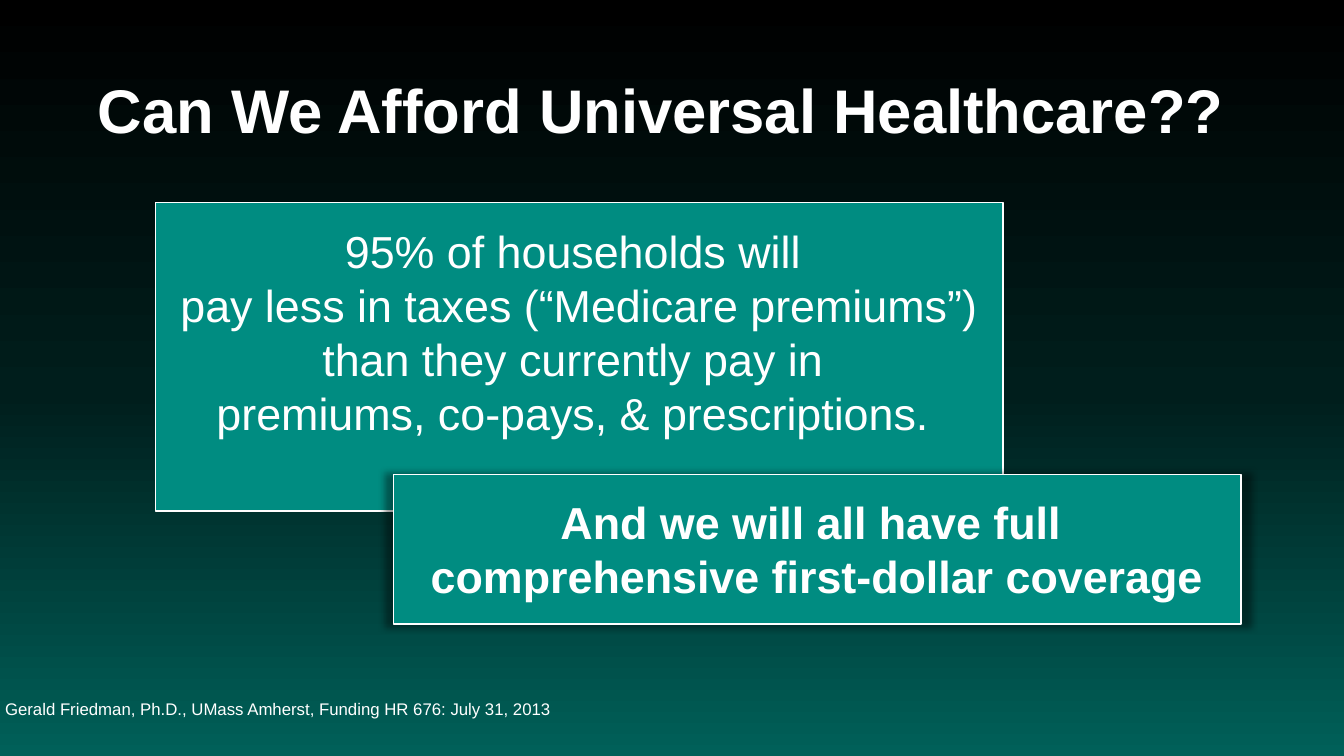
from lxml import etree
from pptx import Presentation
from pptx.dml.color import RGBColor
from pptx.enum.shapes import MSO_SHAPE
from pptx.enum.text import MSO_ANCHOR, MSO_AUTO_SIZE, PP_ALIGN
from pptx.oxml.ns import qn
from pptx.util import Inches, Pt

RECTANGLE = MSO_SHAPE.RECTANGLE
TOP, MIDDLE = MSO_ANCHOR.TOP, MSO_ANCHOR.MIDDLE
LEFT, CENTER = PP_ALIGN.LEFT, PP_ALIGN.CENTER
GROW, FIXED = MSO_AUTO_SIZE.SHAPE_TO_FIT_TEXT, MSO_AUTO_SIZE.NONE

WHITE, TEAL, BLACK = "FFFFFF", "008C81", "000000"
BACKGROUND_STOPS = [(0, BLACK), (52, "001E1C"), (100, "006059")]

TITLE = ["Can We Afford Universal Healthcare??"]
CREDIT = ["Gerald Friedman, Ph.D., UMass Amherst, Funding HR 676: July 31, 2013"]
# The space closing some lines counts in their centring.
SAVINGS = [
    "95% of households will ",
    "pay less in taxes (“Medicare premiums”)",
    "than they currently pay in ",
    "premiums, co-pays, & prescriptions. ",
]
COVERAGE = ["And we will all have full ", "comprehensive first-dollar coverage"]
PANEL_WIDTH = 8.41


def color(value):
    return RGBColor.from_string(value)


def add_color(parent, value):
    return etree.SubElement(parent, qn("a:srgbClr"), val=value)


def paint_background(page, stops):
    """Fill the page with a gradient running from top to bottom."""
    fill = page.background.fill
    fill.gradient()
    fill.gradient_angle = 270
    stop_list = page.element.find(".//" + qn("a:gsLst"))
    for old_stop in list(stop_list):
        stop_list.remove(old_stop)
    for percent, value in stops:
        stop = etree.SubElement(stop_list, qn("a:gs"), pos=str(percent * 1000))
        add_color(stop, value)


def write(box, lines, size=32, bold=False, align=CENTER, anchor=MIDDLE,
          spacing=None, margins=(0.1, 0.2, 0.1, 0.2), auto_size=GROW):
    """Fill a box with one paragraph per line; margins run left, top, right, bottom."""
    frame = box.text_frame
    frame.word_wrap = True
    frame.auto_size = auto_size
    frame.vertical_anchor = anchor
    (frame.margin_left, frame.margin_top,
     frame.margin_right, frame.margin_bottom) = map(Inches, margins)
    for number, line in enumerate(lines):
        para = frame.add_paragraph() if number else frame.paragraphs[0]
        para.alignment = align
        if spacing:
            para.line_spacing = spacing
        span = para.add_run()
        span.text = line
        span.font.name = "Arial"
        span.font.size = Pt(size)
        span.font.bold = bold
        span.font.color.rgb = color(WHITE)


def add_label(page, place, lines, **text_format):
    box = page.shapes.add_textbox(*map(Inches, place))
    write(box, lines, align=LEFT, spacing=0.9, margins=(0.05,) * 4,
          auto_size=FIXED, **text_format)


def add_panel(page, place, lines, **text_format):
    panel = page.shapes.add_shape(RECTANGLE, *map(Inches, place))
    panel.shadow.inherit = False
    panel.fill.solid()
    panel.fill.fore_color.rgb = color(TEAL)
    panel.line.color.rgb = color(WHITE)
    panel.line.width = Pt(1)
    write(panel, lines, **text_format)
    return panel


def add_glow_shadow(panel, blur, opacity):
    """Surround a panel with a soft shadow that has no offset."""
    effects = panel.element.spPr.find(qn("a:effectLst"))
    shadow = etree.SubElement(effects, qn("a:outerShdw"), blurRad=str(Pt(blur)),
                              dist="0", dir="0", sx="102000", sy="102000",
                              algn="ctr", rotWithShape="0")
    shade = add_color(shadow, BLACK)
    etree.SubElement(shade, qn("a:alpha"), val=str(opacity * 1000))


def main():
    deck = Presentation()
    deck.slide_width, deck.slide_height = Inches(13.33), Inches(7.5)
    page = deck.slides.add_slide(deck.slide_layouts[6])
    paint_background(page, BACKGROUND_STOPS)
    add_label(page, (0.92, 0.4, 11.5, 1.45), TITLE, size=44, bold=True)
    add_label(page, (0, 6.58, 9, 0.92), CREDIT, size=12)
    add_panel(page, (1.54, 2.01, PANEL_WIDTH, 3.06), SAVINGS,
              margins=(0.1, 0.2, 0.1, 0.7))
    coverage = add_panel(page, (3.9, 4.71, PANEL_WIDTH, 1.48), COVERAGE,
                         bold=True, anchor=TOP)
    add_glow_shadow(coverage, blur=5, opacity=40)
    deck.save("out.pptx")


if __name__ == "__main__":
    main()
